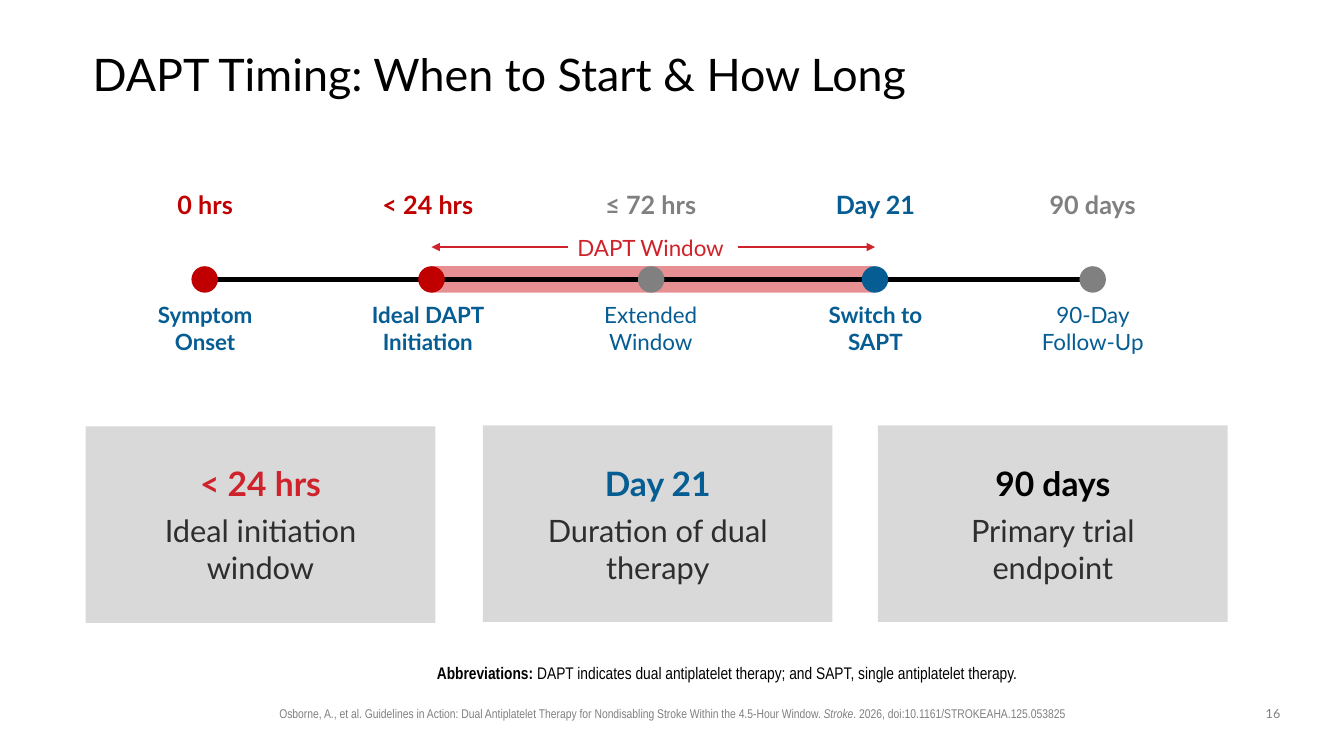
from lxml.etree import SubElement
from pptx import Presentation
from pptx.dml.color import RGBColor
from pptx.enum.shapes import MSO_CONNECTOR, MSO_SHAPE
from pptx.enum.text import MSO_ANCHOR, MSO_AUTO_SIZE, PP_ALIGN
from pptx.oxml.ns import qn
from pptx.util import Pt

RED, CRIMSON, BLUE = "C00000", "CF222A", "065D93"
GRAY, BLACK, DARK, PALE = "808080", "000000", "2E2E2E", "D9D9D9"
LATO, NARROW = "Lato", "Arial Narrow"

TITLE = "DAPT Timing: When to Start & How Long"
MILESTONES = [
    # MARK
]
MILESTONES = [
    ("0 hrs", "Symptom Onset", RED, True, 146.2, 146.5, 97.2),
    ("< 24 hrs", "Ideal DAPT Initiation", RED, True, 308.2, 305.6, 103),
    ("≤ 72 hrs", "Extended Window", GRAY, False, 465.1, 464.8, 97.2),
    ("Day 21", "Switch to SAPT", BLUE, True, 625, 625.3, 97.2),
    ("90 days", "90-Day Follow-Up", GRAY, False, 780.5, 780.5, 104.4),
]
CARDS = [
    ("< 24 hrs", "Ideal initiation window", CRIMSON, 61.2, 304.6, 187.2),
    ("Day 21", "Duration of dual therapy", BLUE, 344.9, 303.8, 177.1),
    ("90 days", "Primary trial endpoint", BLACK, 627.1, 303.8, 164.2),
]
ABBREVIATIONS = [
    ("Abbreviations: ", True, False),
    ("DAPT indicates dual antiplatelet therapy; and SAPT, single antiplatelet therapy.", False, False),
]
CITATION = [
    ("Osborne, A., et al. Guidelines in Action: Dual Antiplatelet Therapy for Nondisabling "
     "Stroke Within the 4.5-Hour Window. ", False, False),
    ("Stroke", False, True),
    (". 2026, doi:10.1161/STROKEAHA.125.053825", False, False),
]
AXIS_Y, ARROW_Y, DOT = 199.6, 176.5, 18.9
CARD_WIDTH, CARD_HEIGHT = 249.8, 140.4


def color(value):
    return RGBColor.from_string(value)


def set_font(font, size, value, bold=False, name=LATO):
    font.name, font.size, font.bold = name, Pt(size), bold
    font.color.rgb = color(value)


def add_text(slide, box, lines, name=LATO, anchor=MSO_ANCHOR.TOP):
    frame = slide.shapes.add_textbox(*map(Pt, box)).text_frame
    frame.word_wrap = True
    frame.vertical_anchor = anchor
    for index, (text, size, value, bold) in enumerate(lines):
        paragraph = frame.add_paragraph() if index else frame.paragraphs[0]
        paragraph.alignment = PP_ALIGN.CENTER
        if index:
            paragraph.space_before = Pt(6)
        set_font(paragraph.font, size, value, bold, name)
        if isinstance(text, str):
            paragraph.add_run().text = text
            continue
        for part, part_bold, part_italic in text:
            run = paragraph.add_run()
            run.text = part
            run.font.bold, run.font.italic = part_bold, part_italic
    return frame


def add_shape(slide, kind, box, fill, alpha=None):
    shape = slide.shapes.add_shape(kind, *map(Pt, box))
    shape.shadow.inherit = False
    shape.fill.solid()
    shape.fill.fore_color.rgb = color(fill)
    shape.line.fill.background()
    if alpha:
        fill_color = shape.fill._xPr.find(".//" + qn("a:srgbClr"))
        SubElement(fill_color, qn("a:alpha"), val=str(alpha * 1000))


def add_line(slide, start, end, y, value, width, arrow=False):
    line = slide.shapes.add_connector(MSO_CONNECTOR.STRAIGHT, Pt(start), Pt(y), Pt(end), Pt(y))
    line.line.color.rgb = color(value)
    line.line.width = Pt(width)
    if arrow:
        SubElement(line.line._get_or_add_ln(), qn("a:tailEnd"), type="triangle")
    SubElement(line._element.spPr, qn("a:effectLst"))


def add_title(slide):
    title = slide.shapes.title
    title.left, title.top, title.width, title.height = map(Pt, (66.2, 28.8, 828, 51.8))
    frame = title.text_frame
    frame.text = TITLE
    frame.auto_size = MSO_AUTO_SIZE.NONE
    frame.vertical_anchor = MSO_ANCHOR.MIDDLE
    frame.margin_left = frame.margin_right = frame.margin_top = frame.margin_bottom = 0
    paragraph = frame.paragraphs[0]
    paragraph.alignment = PP_ALIGN.LEFT
    paragraph.line_spacing = 0.9
    set_font(paragraph.font, 32, BLACK)


def add_timeline(slide):
    centers = [milestone[4] for milestone in MILESTONES]
    start, end = centers[1], centers[3]
    add_shape(slide, MSO_SHAPE.RECTANGLE, (start, AXIS_Y - DOT / 2, end - start, DOT), CRIMSON, 50)
    add_line(slide, centers[0], centers[-1], AXIS_Y, BLACK, 4)
    for time, label, value, bold, center, text_center, width in MILESTONES:
        left = text_center - width / 2
        add_shape(slide, MSO_SHAPE.OVAL, (center - DOT / 2, AXIS_Y - DOT / 2, DOT, DOT), value)
        add_text(slide, (left, 131.8, width, 28.8), [(time, 18, value, True)])
        add_text(slide, (left, 211.7, width, 46.1), [(label, 16, BLUE, bold)])
    add_text(slide, (395.3, 163.4, 139, 26.6), [("DAPT Window", 16, CRIMSON, False)])
    add_line(slide, 527, end, ARROW_Y, CRIMSON, 1, True)
    add_line(slide, 405.4, start, ARROW_Y, CRIMSON, 1, True)


def add_cards(slide):
    for heading, detail, value, left, top, width in CARDS:
        add_shape(slide, MSO_SHAPE.RECTANGLE, (left, top, CARD_WIDTH, CARD_HEIGHT), PALE)
        text_left = left + (CARD_WIDTH - width) / 2
        lines = [(heading, 24, value, True), (detail, 22, DARK, False)]
        add_text(slide, (text_left, 326.9, width, 95.8), lines)


def add_footer(slide):
    frame = add_text(slide, (109.4, 466.6, 827.3, 25.2), [(ABBREVIATIONS, 12, BLACK, False)],
                     NARROW, MSO_ANCHOR.BOTTOM)
    frame.margin_left = 0
    frame.paragraphs[0].line_spacing = 0.9
    add_text(slide, (169.9, 500.4, 620.6, 18), [(CITATION, 9, GRAY, False)], NARROW)
    add_text(slide, (894.2, 500.4, 30.2, 18.7), [("16", 9, GRAY, False)])


def main():
    presentation = Presentation()
    presentation.slide_width, presentation.slide_height = Pt(960), Pt(540)
    slide = presentation.slides.add_slide(presentation.slide_layouts[5])
    add_title(slide)
    add_timeline(slide)
    add_cards(slide)
    add_footer(slide)
    presentation.save("out.pptx")


if __name__ == "__main__":
    main()
